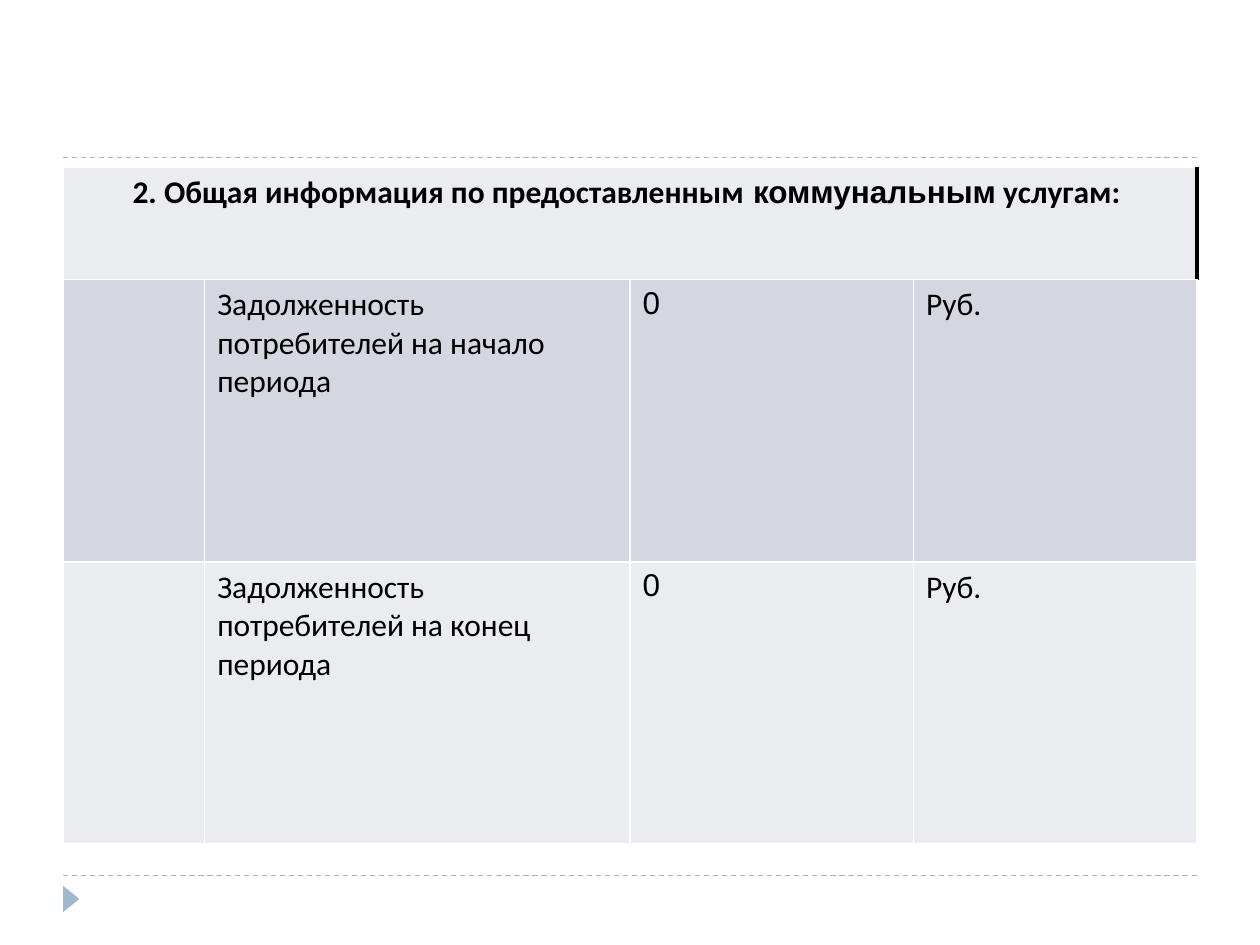
"""Builds the slide on consumer debt for communal services."""
import pptx
import pptx.dml.color
import pptx.enum.dml
import pptx.enum.shapes
import pptx.enum.text
import pptx.oxml
import pptx.oxml.ns
import pptx.util

WIDTH, HEIGHT = 10, 7.5
MARGIN = 0.05 * WIDTH
CONTENT_WIDTH = WIDTH - 2 * MARGIN
COLUMN_SHARES = [1, 3, 2, 2]
ROW_HEIGHTS = [0.89, 2.24, 2.24]
BAND_COLORS = ["EBECF0", "D5D7E0"]
ACCENT = "9FB8CD"
HEADING = [
    ("2. Общая информация по предоставленным", "Calibri"),
    (" коммунальным", "Arial"),
    (" услугам: ", "Calibri"),
]
DEBTS = [
    ("Задолженность потребителей на начало периода", "0", "Руб."),
    ("Задолженность потребителей на конец периода", "0", "Руб."),
]
DEBT_FONTS = ["Calibri", "Arial", "Calibri"]


def inches(*lengths):
    """Return the lengths as EMU values."""
    return [pptx.util.Inches(length) for length in lengths]


def color(hex_code):
    """Return the colour for a hex string."""
    return pptx.dml.color.RGBColor.from_string(hex_code)


def add_rule(slide, top):
    """Draw a dashed rule across the content width."""
    ends = inches(MARGIN, top, WIDTH - MARGIN, top)
    rule = slide.shapes.add_connector(pptx.enum.shapes.MSO_CONNECTOR.STRAIGHT, *ends)
    rule.line.color.rgb = color(ACCENT)
    formats = {"width": pptx.util.Pt(0.75), "dash_style": pptx.enum.dml.MSO_LINE.DASH}
    for name, value in formats.items():
        setattr(rule.line, name, value)
    effects = pptx.oxml.parse_xml(f'<a:effectLst {pptx.oxml.ns.nsdecls("a")}/>')
    rule.element.spPr.append(effects)


def add_marker(slide):
    """Draw the triangle that points right below the lower rule."""
    marker = slide.shapes.add_shape(
        pptx.enum.shapes.MSO_SHAPE.ISOSCELES_TRIANGLE, *inches(0.46, 7.07, 0.21, 0.13)
    )
    marker.rotation = 90
    marker.shadow.inherit = False
    marker.fill.solid()
    marker.fill.fore_color.rgb = color(ACCENT)
    marker.line.fill.background()


def set_borders(cell, right=("FFFFFF", 1)):
    """Give a cell thin white borders, with a choice of right border."""
    borders = {"L": ("FFFFFF", 1), "R": right, "T": ("FFFFFF", 1), "B": ("FFFFFF", 1)}
    properties = cell._tc.get_or_add_tcPr()
    for side, (hex_code, points) in borders.items():
        properties.append(pptx.oxml.parse_xml(
            f'<a:ln{side} {pptx.oxml.ns.nsdecls("a")} w="{pptx.util.Pt(points)}">'
            f'<a:solidFill><a:srgbClr val="{hex_code}"/></a:solidFill></a:ln{side}>'
        ))


def write(cell, runs, bold=False):
    """Write runs of text and font name into a cell."""
    for text, font in runs:
        run = cell.text_frame.paragraphs[0].add_run()
        run.text = text
        formats = {"name": font, "size": pptx.util.Pt(18), "bold": bold}
        for name, value in formats.items():
            setattr(run.font, name, value)
        run.font.color.rgb = color("000000")


def add_debt_table(slide):
    """Add the table with a merged heading and one row per debt."""
    frame = slide.shapes.add_table(
        len(ROW_HEIGHTS), len(COLUMN_SHARES),
        *inches(MARGIN, 1.33, CONTENT_WIDTH, sum(ROW_HEIGHTS)),
    )
    table = frame.table
    for column, share in zip(table.columns, COLUMN_SHARES):
        column.width = pptx.util.Inches(CONTENT_WIDTH * share / sum(COLUMN_SHARES))
    for index, (row, height) in enumerate(zip(table.rows, ROW_HEIGHTS)):
        row.height = pptx.util.Inches(height)
        for cell in row.cells:
            set_borders(cell, ("FFFFFF", 1) if index else ("000000", 2.25))
            cell.fill.solid()
            cell.fill.fore_color.rgb = color(BAND_COLORS[index % 2])

    heading = table.cell(0, 0)
    heading.merge(table.cell(0, len(COLUMN_SHARES) - 1))
    write(heading, HEADING, bold=True)
    heading.text_frame.paragraphs[0].alignment = pptx.enum.text.PP_ALIGN.CENTER
    for row, debt in enumerate(DEBTS, 1):
        for column, run in enumerate(zip(debt, DEBT_FONTS), 1):
            write(table.cell(row, column), [run])


def main():
    """Build and save the slide."""
    deck = pptx.Presentation()
    deck.slide_width, deck.slide_height = inches(WIDTH, HEIGHT)
    slide = deck.slides.add_slide(deck.slide_layouts[6])
    for top in (6.95, 1.25):
        add_rule(slide, top)
    add_marker(slide)
    add_debt_table(slide)
    deck.save("out.pptx")


if __name__ == "__main__":
    main()
